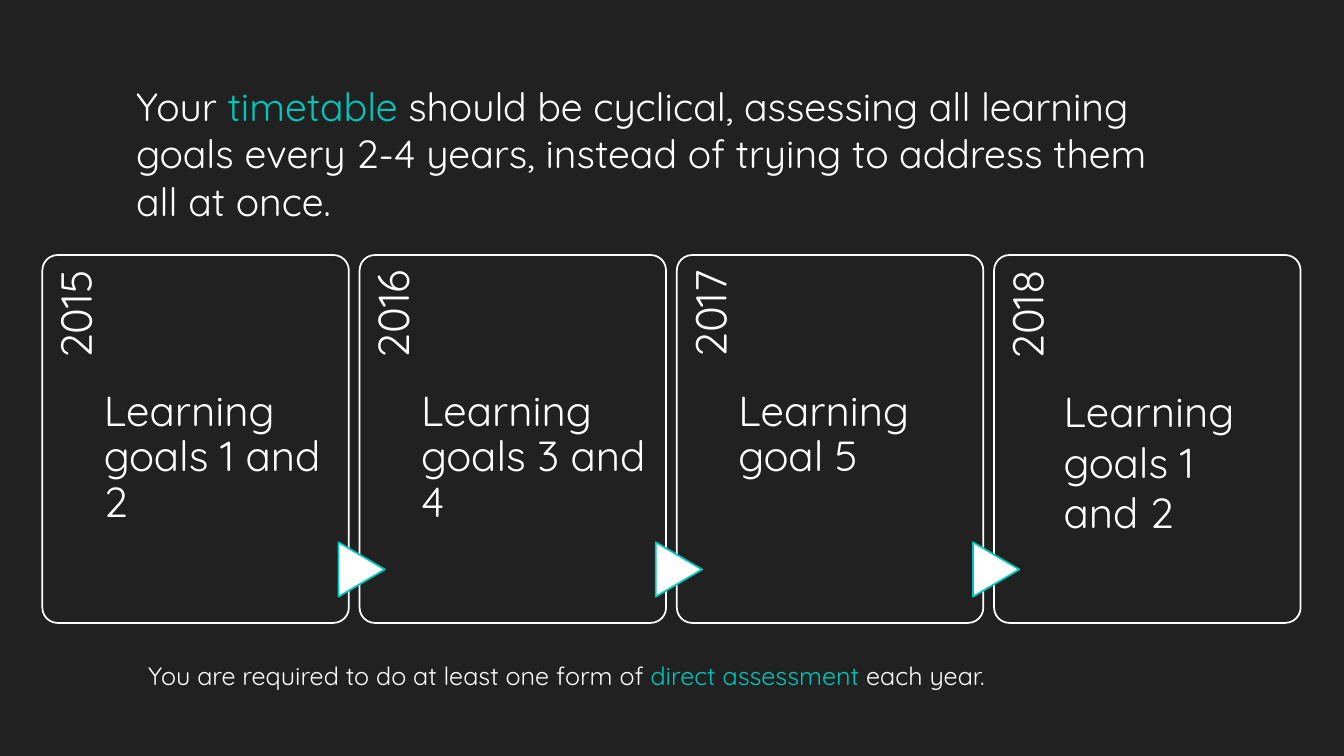
from pptx import Presentation
from pptx.dml.color import RGBColor
from pptx.enum.shapes import MSO_SHAPE
from pptx.enum.text import MSO_ANCHOR, MSO_AUTO_SIZE, PP_ALIGN
from pptx.util import Inches, Pt

BACKGROUND = RGBColor(0x21, 0x21, 0x21)
WHITE = RGBColor(0xFF, 0xFF, 0xFF)
TEAL = RGBColor(0x00, 0xC6, 0xBB)
FONT = "Quicksand"


def write_text(shape, runs, size, margins=(0.1, 0.05, 0.1, 0.05), grow=False):
    frame = shape.text_frame
    frame.word_wrap = True
    frame.auto_size = MSO_AUTO_SIZE.SHAPE_TO_FIT_TEXT if grow else MSO_AUTO_SIZE.NONE
    frame.vertical_anchor = MSO_ANCHOR.TOP
    frame.margin_left, frame.margin_top, frame.margin_right, frame.margin_bottom = map(Inches, margins)
    paragraph = frame.paragraphs[0]
    paragraph.alignment = PP_ALIGN.LEFT
    for text, color in runs:
        run = paragraph.add_run()
        run.text = text
        run.font.name = FONT
        run.font.size = Pt(size)
        run.font.color.rgb = color
    return paragraph


def add_outlined_shape(slide, preset, left, top, width, height, line_color):
    shape = slide.shapes.add_shape(preset, Inches(left), Inches(top), Inches(width), Inches(height))
    shape.shadow.inherit = False
    shape.line.color.rgb = line_color
    shape.line.width = Pt(1.25)
    return shape


presentation = Presentation()
presentation.slide_width = Inches(13.33)
presentation.slide_height = Inches(7.5)
slide = presentation.slides.add_slide(presentation.slide_layouts[5])
slide.background.fill.solid()
slide.background.fill.fore_color.rgb = BACKGROUND

title = slide.shapes.title
title.left, title.top, title.width, title.height = map(Inches, (1.25, 0.77, 10.22, 1.51))
write_text(title, [
    ("Your ", WHITE),
    ("timetable", TEAL),
    (" should be cyclical, assessing all learning goals every 2-4 years, "
     "instead of trying to address them all at once.", WHITE),
], 28, grow=True)

timetable = [
    ("2015", "Learning goals 1 and 2"),
    ("2016", "Learning goals 3 and 4"),
    ("2017", "Learning goal 5"),
    ("2018", "Learning goals 1 and 2"),
]
first_left, last_left = 0.42, 9.86
column_pitch = (last_left - first_left) / (len(timetable) - 1)
card_top, card_width, card_height = 2.53, 3.04, 3.65

for column, (year, goals) in enumerate(timetable):
    card_left = first_left + column * column_pitch
    card = add_outlined_shape(slide, MSO_SHAPE.ROUNDED_RECTANGLE,
                              card_left, card_top, card_width, card_height, WHITE)
    card.adjustments[0] = 0.05
    card.fill.background()

    year_box = slide.shapes.add_textbox(Inches(card_left - 1.19), Inches(3.72), Inches(2.99), Inches(0.61))
    year_box.rotation = 270
    paragraph = write_text(year_box, [(year, WHITE)], 31, (0, 0.12, 0.15, 0))
    paragraph.alignment = PP_ALIGN.RIGHT
    paragraph.line_spacing = 0.9

    if column > 0:
        arrow = add_outlined_shape(slide, MSO_SHAPE.FLOWCHART_EXTRACT,
                                   card_left - 0.25, 5.42, 0.54, 0.46, TEAL)
        arrow.rotation = 90
        arrow.fill.solid()
        arrow.fill.fore_color.rgb = WHITE

    if column < len(timetable) - 1:
        goals_box = slide.shapes.add_textbox(Inches(card_left + 0.61), Inches(card_top),
                                             Inches(2.27), Inches(card_height))
        paragraph = write_text(goals_box, [(goals, WHITE)], 30, (0, 1.34, 0, 0))
        paragraph.line_spacing = 0.9
    else:
        goals_box = slide.shapes.add_textbox(Inches(card_left + 0.59), Inches(3.78), Inches(2.02), Inches(1.62))
        write_text(goals_box, [(goals, WHITE)], 30, grow=True)

requirement = slide.shapes.add_textbox(Inches(1.37), Inches(6.5), Inches(9.36), Inches(0.4))
write_text(requirement, [
    ("You are required to do at least one form of ", WHITE),
    ("direct assessment ", TEAL),
    ("each year.", WHITE),
], 18, grow=True)

presentation.save("out.pptx")
